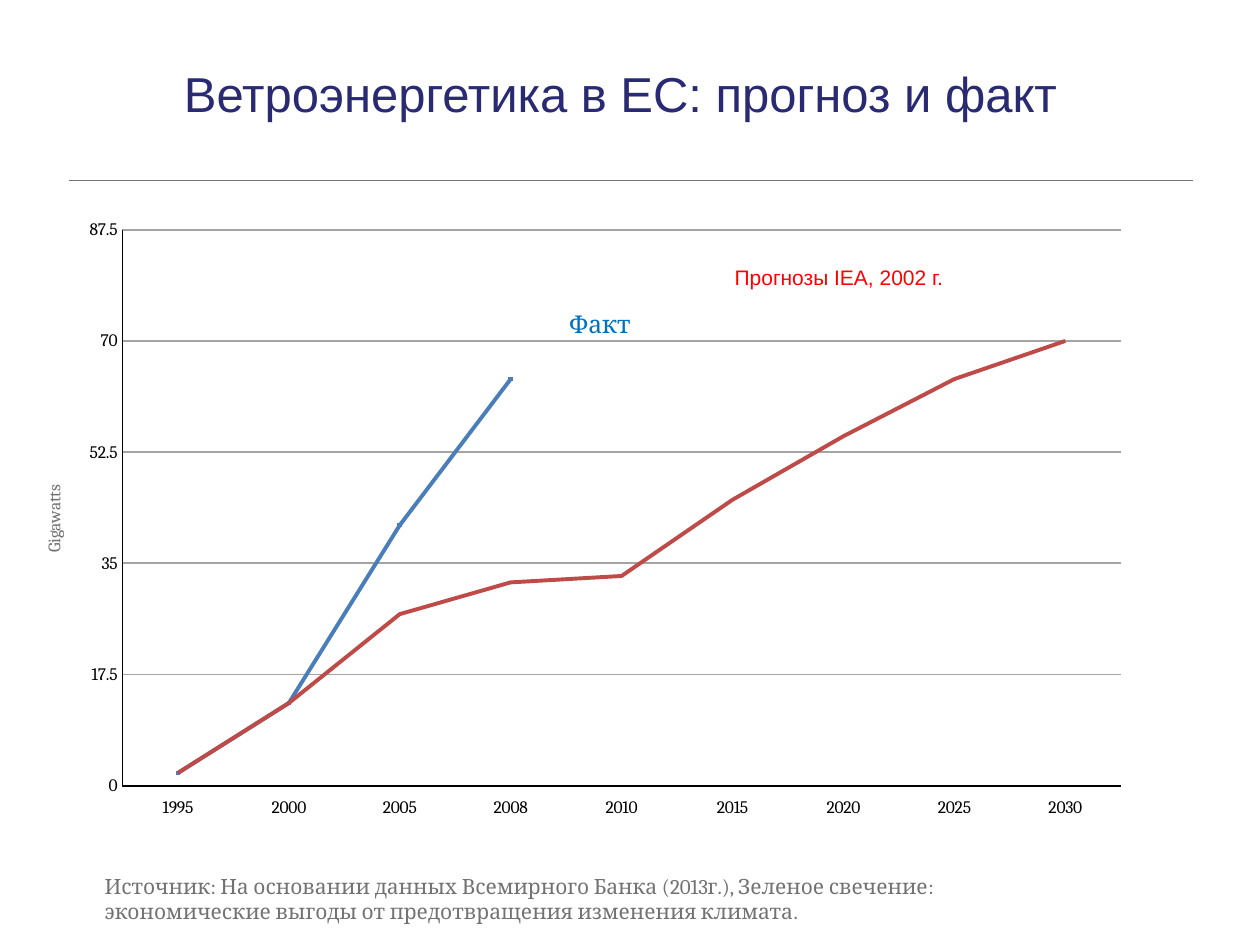
"""Builds a slide comparing forecast and actual EU wind power capacity."""
from dataclasses import dataclass

from lxml.etree import SubElement
from pptx import Presentation
from pptx.chart.data import CategoryChartData
from pptx.dml.color import RGBColor
from pptx.enum.chart import XL_CHART_TYPE, XL_MARKER_STYLE, XL_TICK_LABEL_POSITION, XL_TICK_MARK
from pptx.enum.shapes import MSO_CONNECTOR
from pptx.enum.text import MSO_ANCHOR
from pptx.oxml.ns import qn
from pptx.util import Cm, Pt


@dataclass(frozen=True)
class Theme:
    heading: str = "292A72"
    muted: str = "727272"
    axis: str = "000000"
    grid: str = "A4A4A4"
    actual_line: str = "4A7EBB"
    actual_marker: str = "4F81BD"
    forecast_line: str = "BE4B48"
    actual_label: str = "0070C0"
    forecast_label: str = "FF0000"
    sans: str = "Arial"
    serif: str = "Cambria"
    heading_size: int = 28
    label_size: int = 14
    note_size: int = 12
    axis_size: int = 10


THEME = Theme()
YEARS = ["1995", "2000", "2005", "2008", "2010", "2015", "2020", "2025", "2030"]
ACTUAL = [2, 13, 41, 64]
FORECAST = [2, 13, 27, 32, 33, 45, 55, 64, 70]
PLOT_AREA = {"x": 0.077, "y": 0.032, "w": 0.923, "h": 0.912}


def apply_format(target, values):
    for name, value in values.items():
        setattr(target, name, value)


def style_font(font, face, size, color):
    apply_format(font, {"name": face, "size": Pt(size), "bold": False})
    font.color.rgb = RGBColor.from_string(color)


def style_line(line, color, width):
    line.color.rgb = RGBColor.from_string(color)
    line.width = Pt(width)


def add_text(slide, text, box, face, size, color, anchor=MSO_ANCHOR.TOP):
    frame = slide.shapes.add_textbox(*map(Cm, box)).text_frame
    apply_format(frame, {
        "word_wrap": True, "vertical_anchor": anchor,
        "margin_left": 0, "margin_right": 0, "margin_top": 0, "margin_bottom": 0,
    })
    wording = frame.paragraphs[0].add_run()
    wording.text = text
    style_font(wording.font, face, size, color)


def add_rule(slide, left, right, top):
    rule = slide.shapes.add_connector(
        MSO_CONNECTOR.STRAIGHT, Cm(left), Cm(top), Cm(right), Cm(top))
    style_line(rule.line, THEME.muted, 0.5)
    SubElement(rule.element.spPr, qn("a:effectLst"))


def place_plot(chart):
    plot_area = chart.element.chart.plotArea
    layout = plot_area.find(qn("c:layout"))
    if layout is None:
        layout = SubElement(plot_area, qn("c:layout"))
        plot_area.insert(0, layout)
    manual = SubElement(layout, qn("c:manualLayout"))
    settings = {"layoutTarget": "inner", "xMode": "edge", "yMode": "edge", **PLOT_AREA}
    for name, value in settings.items():
        SubElement(manual, qn(f"c:{name}")).set("val", str(value))


def style_axes(chart):
    value_axis, year_axis = chart.value_axis, chart.category_axis
    for axis in (value_axis, year_axis):
        apply_format(axis, {"major_tick_mark": XL_TICK_MARK.NONE,
                            "minor_tick_mark": XL_TICK_MARK.NONE})
        style_line(axis.format.line, THEME.axis, 1)
        style_font(axis.tick_labels.font, THEME.serif, THEME.axis_size, THEME.axis)
    year_axis.tick_label_position = XL_TICK_LABEL_POSITION.LOW
    apply_format(value_axis, {"minimum_scale": 0, "maximum_scale": 87.5, "major_unit": 17.5,
                              "has_major_gridlines": True})
    apply_format(value_axis.tick_labels, {"number_format": "0.#", "number_format_is_linked": True})
    style_line(value_axis.major_gridlines.format.line, THEME.grid, 1)
    unit = value_axis.axis_title.text_frame
    unit.text = "Gigawatts"
    style_font(unit.paragraphs[0].runs[0].font, THEME.serif, THEME.axis_size, THEME.muted)
    rotation = value_axis.axis_title.element.find(".//" + qn("a:bodyPr"))
    rotation.set("rot", "-5400000")
    rotation.set("vert", "horz")


def style_series(chart):
    actual, forecast = chart.plots[0].series
    for series, color in ((actual, THEME.actual_line), (forecast, THEME.forecast_line)):
        series.smooth = False
        style_line(series.format.line, color, 2.25)
    forecast.marker.style = XL_MARKER_STYLE.NONE
    apply_format(actual.marker, {"style": XL_MARKER_STYLE.SQUARE, "size": 2})
    marker_color = RGBColor.from_string(THEME.actual_marker)
    actual.marker.format.fill.solid()
    actual.marker.format.fill.fore_color.rgb = marker_color
    actual.marker.format.line.color.rgb = marker_color


def add_capacity_chart(slide, box):
    capacity = CategoryChartData()
    capacity.categories = YEARS
    capacity.add_series("Series 1", ACTUAL + [None] * (len(YEARS) - len(ACTUAL)))
    capacity.add_series("Series 2", FORECAST)
    chart = slide.shapes.add_chart(
        XL_CHART_TYPE.LINE_MARKERS, *map(Cm, box), capacity).chart
    apply_format(chart, {"has_legend": False, "has_title": False})
    chart.plots[0].vary_by_categories = False
    style_font(chart.font, THEME.serif, THEME.axis_size, THEME.axis)
    place_plot(chart)
    style_axes(chart)
    style_series(chart)


def main():
    deck = Presentation()
    apply_format(deck, {"slide_width": Cm(25.4), "slide_height": Cm(19.05)})
    slide = deck.slides.add_slide(deck.slide_layouts[6])
    add_rule(slide, 1.4, 24.05, 3.63)
    add_text(slide, "Ветроэнергетика в ЕС: прогноз и факт", (3.71, 0.41, 21.69, 2.92),
             THEME.sans, THEME.heading_size, THEME.heading, MSO_ANCHOR.MIDDLE)
    add_text(slide, "Источник: На основании данных Всемирного Банка (2013г.), Зеленое свечение: "
             "экономические выгоды от предотвращения изменения климата.",
             (2.11, 17.6, 19.2, 0.99), THEME.serif, THEME.note_size, THEME.muted)
    add_capacity_chart(slide, (0.79, 4.24, 21.82, 12.29))
    add_text(slide, "Факт", (11.48, 6.22, 5.44, 0.56),
             THEME.serif, THEME.label_size, THEME.actual_label)
    add_text(slide, "Прогнозы IEA, 2002 г.", (14.81, 5.33, 6.81, 0.48),
             THEME.sans, THEME.note_size, THEME.forecast_label)
    deck.save("out.pptx")


if __name__ == "__main__":
    main()
